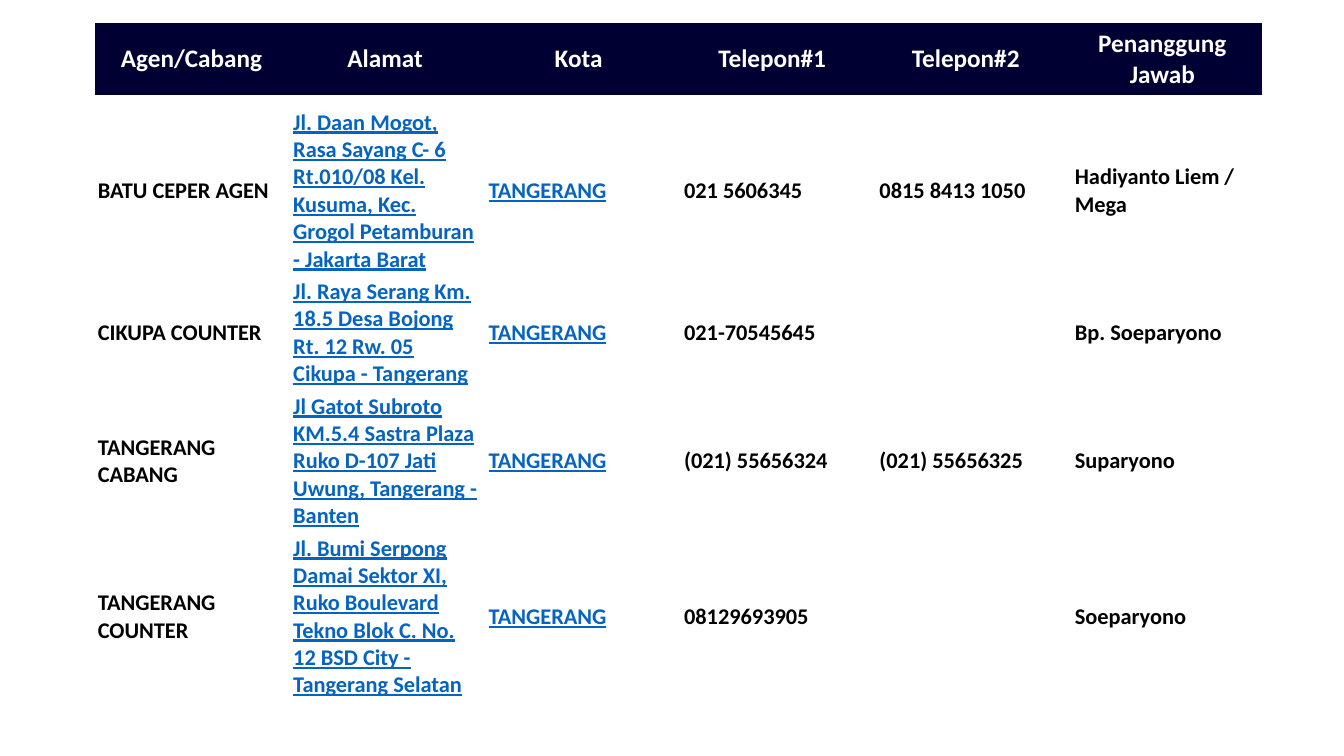
from dataclasses import dataclass

from pptx import Presentation
from pptx.dml.color import RGBColor
from pptx.enum.text import MSO_ANCHOR, PP_ALIGN
from pptx.oxml.ns import qn
from pptx.util import Inches, Pt

MIDDLE = MSO_ANCHOR.MIDDLE
CENTER = PP_ALIGN.CENTER
LEFT = PP_ALIGN.LEFT


@dataclass(frozen=True)
class Theme:
    font: str = "Calibri"
    head: int = 18
    body: int = 16
    navy: RGBColor = RGBColor(0x00, 0x00, 0x33)
    white: RGBColor = RGBColor(0xFF, 0xFF, 0xFF)
    black: RGBColor = RGBColor(0x00, 0x00, 0x00)
    link: RGBColor = RGBColor(0x05, 0x63, 0xC1)
    plain: str = "{2D5ABB26-0587-4C30-8999-92F81FD0307C}"


class Deck:
    def __init__(self, theme):
        self.theme = theme
        self.file = Presentation()
        self.file.slide_width = Inches(13.33)
        self.file.slide_height = Inches(7.5)
        self.slide = self.file.slides.add_slide(self.file.slide_layouts[6])

    def table(self, box, cols, rows):
        left, top, width, height = map(Inches, box)
        frame = self.slide.shapes.add_table(
            len(rows), len(cols), left, top, width, height)
        table = frame.table
        table.first_row = table.horz_banding = False
        style = table._tbl.tblPr.find(qn("a:tableStyleId"))
        style.text = self.theme.plain
        for col, size in zip(table.columns, cols):
            col.width = Inches(size)
        for row, size in zip(table.rows, rows):
            row.height = Inches(size)
        frame.height = height
        return table

    def text(self, cell, text, size, color, align=LEFT, line=False):
        cell.vertical_anchor = MIDDLE
        cell.text_frame.text = text
        para = cell.text_frame.paragraphs[0]
        para.alignment = align
        for run in para.runs:
            font = run.font
            font.name = self.theme.font
            font.size = Pt(size)
            font.bold = True
            font.color.rgb = color
            font.underline = line

    def header(self, cell, text):
        cell.fill.solid()
        cell.fill.fore_color.rgb = self.theme.navy
        self.text(cell, text, self.theme.head, self.theme.white, CENTER)

    def entry(self, cell, text, link):
        cell.margin_left = cell.margin_right = Inches(0.05)
        cell.margin_top = Inches(0.02)
        cell.margin_bottom = Inches(0.03)
        color = self.theme.link if link else self.theme.black
        self.text(cell, text, self.theme.body, color, line=link)

    def save(self):
        self.file.save("out.pptx")


HEADS = ["Agen/Cabang", "Alamat", "Kota", "Telepon#1", "Telepon#2",
         "Penanggung Jawab"]
CITY = "TANGERANG"
LINKS = {1, 2}
WIDTH = 11.63
AGENTS = [
    ("BATU CEPER AGEN",
     "Jl. Daan Mogot, Rasa Sayang C- 6 Rt.010/08 Kel. Kusuma, Kec. "
     "Grogol Petamburan - Jakarta Barat",
     CITY, "021 5606345", "0815 8413 1050", "Hadiyanto Liem / Mega"),
    ("CIKUPA COUNTER",
     "Jl. Raya Serang Km. 18.5 Desa Bojong Rt. 12 Rw. 05 "
     "Cikupa - Tangerang",
     CITY, "021-70545645", "", "Bp. Soeparyono"),
    ("TANGERANG CABANG",
     "Jl Gatot Subroto KM.5.4 Sastra Plaza Ruko D-107 Jati Uwung, "
     "Tangerang - Banten",
     CITY, "(021) 55656324", "(021) 55656325", "Suparyono"),
    ("TANGERANG COUNTER",
     "Jl. Bumi Serpong Damai Sektor XI, Ruko Boulevard Tekno Blok C. "
     "No. 12 BSD City - Tangerang Selatan",
     CITY, "08129693905", "", "Soeparyono"),
]


def main():
    deck = Deck(Theme())
    top = deck.table((0.94, 0.23, 11.58, 0.71),
                     [1.92] * 5 + [1.98], [0.71])
    for col, head in enumerate(HEADS):
        deck.header(top.cell(0, col), head)
    count = len(HEADS)
    body = deck.table((0.92, 1.06, WIDTH, 5.8),
                      [WIDTH / count] * count, [1.32, 0.96, 1.14, 1.32])
    for row, agent in enumerate(AGENTS):
        for col, text in enumerate(agent):
            if text:
                deck.entry(body.cell(row, col), text, col in LINKS)
    deck.save()


if __name__ == "__main__":
    main()
